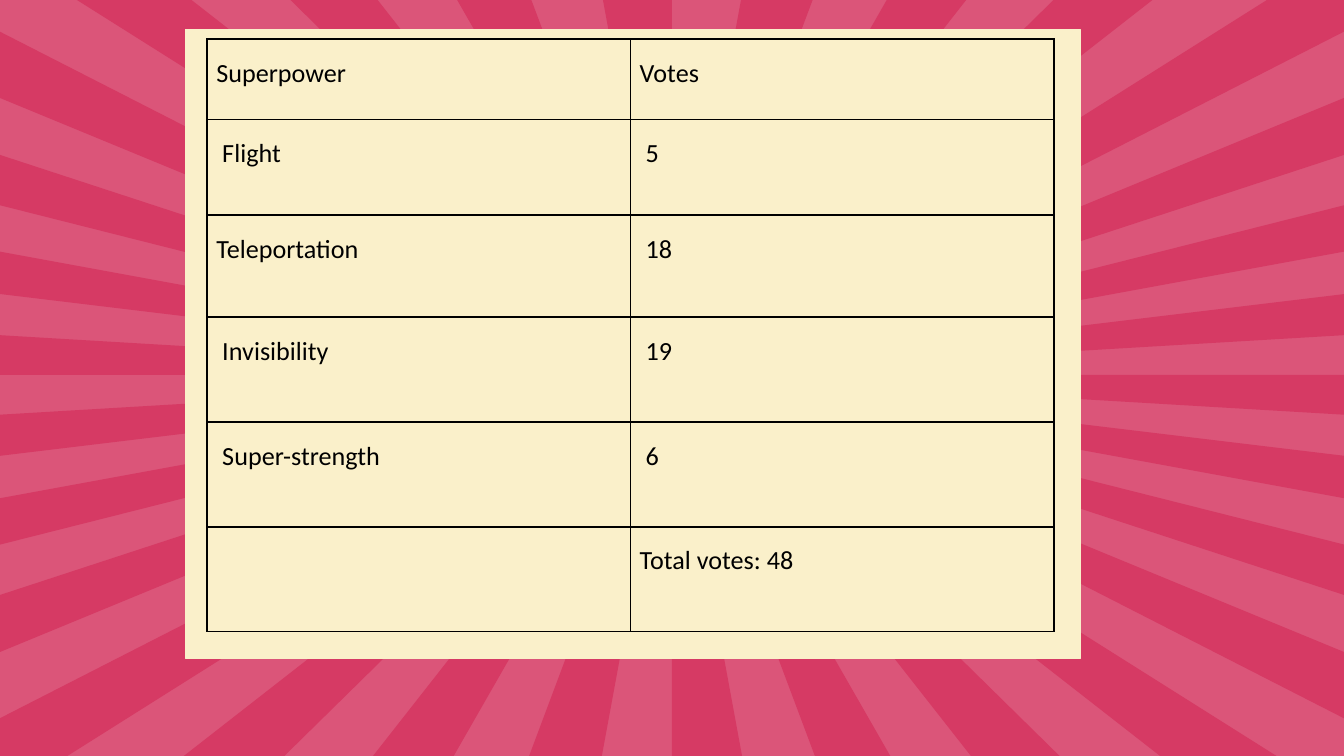
"""Build a superpower vote table on a sunburst background."""
from dataclasses import dataclass

import pptx
import pptx.dml.color
import pptx.enum.shapes
import pptx.oxml.ns
import pptx.util
from lxml import etree
from pptx.util import Inches


@dataclass(frozen=True)
class Theme:
    background: str = "DB5579"
    ray: str = "D63A64"
    panel: str = "FAF0CA"
    text: str = "000000"
    border: str = "000000"
    font: str = "Calibri"
    text_size: float = 14
    panel_line: float = 0.75
    table_line: float = 1


THEME = Theme()
SLIDE_WIDTH = 10
SLIDE_HEIGHT = SLIDE_WIDTH * 9 / 16
CENTER = (5, 2.79)
HALF_WIDTH, HALF_HEIGHT = 5.07, 2.88
RAY_HEIGHTS = (0, 0.3, 0.61, 0.93, 1.28, 1.66, 2.09, 2.59)
RAY_WIDTHS = (4.57, 3.69, 2.93, 2.26, 1.65, 1.08, 0.53, 0)
COLUMN_WIDTH = 3.15
ROW_HEIGHTS = (0.6, 0.71, 0.76, 0.78, 0.78, 0.78)
ROWS = (
    ("Superpower", "Votes"),
    (" Flight", " 5"),
    ("Teleportation", " 18"),
    (" Invisibility", " 19"),
    (" Super-strength", " 6"),
    ("", "Total votes: 48"),
)


def color(value):
    return pptx.dml.color.RGBColor.from_string(value)


def apply_format(target, values):
    for name, value in values.items():
        setattr(target, name, value)


def fill_solid(target, value):
    target.fill.solid()
    target.fill.fore_color.rgb = color(value)


def ray_ends():
    edge = [(HALF_WIDTH, height) for height in RAY_HEIGHTS]
    edge += [(width, HALF_HEIGHT) for width in RAY_WIDTHS]
    forward, backward = edge[:-1], edge[:0:-1]
    quadrants = ((1, -1, forward), (-1, -1, backward), (-1, 1, forward), (1, 1, backward))
    return [(sx * x, sy * y) for sx, sy, points in quadrants for x, y in points]


def add_ray(slide, start, end):
    outline = [start, end]
    if abs(start[0]) == HALF_WIDTH and abs(end[1]) == HALF_HEIGHT:
        outline.insert(1, (start[0], end[1]))
    points = [(Inches(CENTER[0] + x), Inches(CENTER[1] + y)) for x, y in outline]
    builder = slide.shapes.build_freeform(Inches(CENTER[0]), Inches(CENTER[1]))
    builder.add_line_segments(points, close=True)
    shape = builder.convert_to_shape()
    shape.shadow.inherit = False
    fill_solid(shape, THEME.ray)
    shape.line.fill.background()


def add_sunburst(slide):
    ends = ray_ends()
    for index in range(1, len(ends), 2):
        add_ray(slide, ends[index], ends[(index + 1) % len(ends)])


def add_panel(slide):
    shape = slide.shapes.add_shape(
        pptx.enum.shapes.MSO_SHAPE.RECTANGLE,
        Inches(1.38), Inches(0.22), Inches(6.66), Inches(4.68),
    )
    shape.shadow.inherit = False
    fill_solid(shape, THEME.panel)
    shape.line.color.rgb = color(THEME.panel)
    shape.line.width = pptx.util.Pt(THEME.panel_line)


def add_borders(cell):
    properties = cell._tc.get_or_add_tcPr()
    qualify = pptx.oxml.ns.qn
    for side in ("a:lnL", "a:lnR", "a:lnT", "a:lnB"):
        line = etree.SubElement(
            properties, qualify(side), w=str(pptx.util.Pt(THEME.table_line))
        )
        fill = etree.SubElement(line, qualify("a:solidFill"))
        etree.SubElement(fill, qualify("a:srgbClr"), val=THEME.border)


def format_cell(cell, text):
    add_borders(cell)
    cell.fill.background()
    apply_format(cell, {
        "margin_left": Inches(0.07), "margin_right": Inches(0.07),
        "margin_top": Inches(0.1), "margin_bottom": Inches(0.1),
    })
    paragraph = cell.text_frame.paragraphs[0]
    paragraph.line_spacing = 1.15
    if text:
        run = paragraph.add_run()
        run.text = text
        apply_format(run.font, {
            "name": THEME.font, "size": pptx.util.Pt(THEME.text_size), "bold": False,
        })
        run.font.color.rgb = color(THEME.text)


def add_vote_table(slide):
    table = slide.shapes.add_table(
        len(ROWS), len(ROWS[0]), Inches(1.54), Inches(0.29),
        Inches(COLUMN_WIDTH * len(ROWS[0])), Inches(sum(ROW_HEIGHTS)),
    ).table
    apply_format(table, {"first_row": False, "horz_banding": False})
    for column in table.columns:
        column.width = Inches(COLUMN_WIDTH)
    for row, height, texts in zip(table.rows, ROW_HEIGHTS, ROWS):
        row.height = Inches(height)
        for cell, text in zip(row.cells, texts):
            format_cell(cell, text)


def main():
    presentation = pptx.Presentation()
    apply_format(presentation, {
        "slide_width": Inches(SLIDE_WIDTH), "slide_height": Inches(SLIDE_HEIGHT),
    })
    slide = presentation.slides.add_slide(presentation.slide_layouts[6])
    fill_solid(slide.background, THEME.background)
    add_sunburst(slide)
    add_panel(slide)
    add_vote_table(slide)
    presentation.save("out.pptx")


if __name__ == "__main__":
    main()
